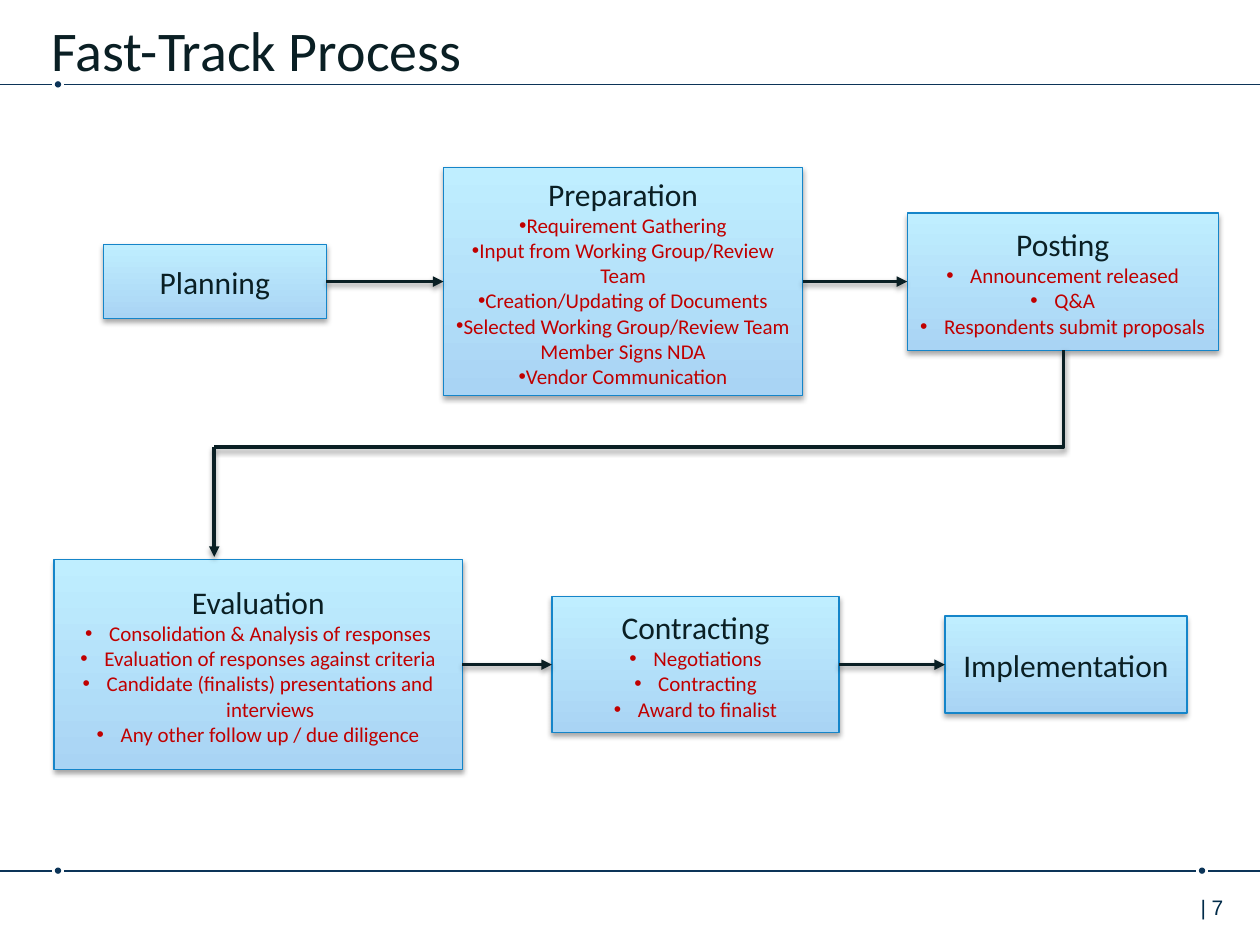
import pptx
import pptx.util
import pptx.dml.color
import pptx.enum.dml
import pptx.enum.shapes
import pptx.enum.text
import pptx.oxml
import pptx.oxml.ns
from dataclasses import dataclass
from lxml import etree

Inches, Pt = pptx.util.Inches, pptx.util.Pt
RGB = pptx.dml.color.RGBColor.from_string
SHAPE = pptx.enum.shapes.MSO_SHAPE
CONNECTOR = pptx.enum.shapes.MSO_CONNECTOR
ALIGN = pptx.enum.text.PP_ALIGN
ANCHOR = pptx.enum.text.MSO_ANCHOR
qn = pptx.oxml.ns.qn


@dataclass(frozen=True)
class Theme:
    ink: str = "0A1F24"
    rule: str = "0C3458"
    number: str = "002B49"
    detail: str = "C00000"
    border: str = "1585C9"
    top: str = "BFEEFF"
    bottom: str = "A9D4F4"
    font: str = "Calibri"
    number_font: str = "Arial"
    title_size: int = 32
    stage_size: int = 18
    small_size: int = 12


THEME = Theme()

# Each stage: left offset in its row, width, height, name, details, bullet indent
TOP_ROW = [
    (0, 1.77, 0.59, "Planning", [], 0),
    (2.7, 2.85, 1.81, "Preparation", [
        "Requirement Gathering",
        "Input from Working Group/Review Team",
        "Creation/Updating of Documents",
        "Selected Working Group/Review Team Member Signs NDA",
        "Vendor Communication"], 0),
    (6.38, 2.47, 1.09, "Posting", [
        "Announcement released", "Q&A", "Respondents submit proposals"], 0.19),
]
BOTTOM_ROW = [
    (0, 3.24, 1.67, "Evaluation", [
        "Consolidation & Analysis of responses",
        "Evaluation of responses against criteria",
        "Candidate (finalists) presentations and interviews",
        "Any other follow up / due diligence"], 0.19),
    (3.95, 2.28, 1.08, "Contracting", [
        "Negotiations", "Contracting", "Award to finalist"], 0.19),
    (7.07, 1.92, 0.77, "Implementation", [], 0),
]


def add_effects(sp_pr, alpha=None, distance=0):
    """Set the effect list: a soft shadow straight below, or nothing."""
    effects = sp_pr.find(qn("a:effectLst"))
    if effects is None:
        effects = etree.SubElement(sp_pr, qn("a:effectLst"))
    if alpha:
        shadow = etree.SubElement(
            effects, qn("a:outerShdw"), blurRad=str(Pt(3.1)),
            dist=str(Pt(distance)), dir="5400000", rotWithShape="0")
        color = etree.SubElement(shadow, qn("a:srgbClr"), val="000000")
        etree.SubElement(color, qn("a:alpha"), val=str(alpha * 1000))


def write(p, text, size, color, font=THEME.font):
    r = p.add_run()
    r.text = text
    for name, value in {"size": Pt(size), "name": font}.items():
        setattr(r.font, name, value)
    r.font.color.rgb = RGB(color)


def add_bullet(p, indent):
    p_pr = p._p.get_or_add_pPr()
    p_pr.set("marL", str(Inches(indent)))
    p_pr.set("indent", str(-Inches(indent)))
    etree.SubElement(p_pr, qn("a:buFont"), typeface=THEME.number_font)
    etree.SubElement(p_pr, qn("a:buChar"), char="•")


def add_text(s, box, text, size, color, font, insets):
    tf = s.shapes.add_textbox(*map(Inches, box)).text_frame
    tf.word_wrap = True
    for side, value in insets.items():
        setattr(tf, "margin_" + side, Inches(value))
    write(tf.paragraphs[0], text, size, color, font)


def style_line(line, color, width):
    line.color.rgb = RGB(color)
    line.width = Pt(width)


def add_rule(s, y, dots):
    """Draw a full-width rule that breaks around each dot."""
    gap, size = 0.05, 0.05
    starts = [0] + [x + gap for x in dots]
    ends = [x - gap for x in dots] + [10]
    for start, end in zip(starts, ends):
        c = s.shapes.add_connector(CONNECTOR.STRAIGHT, Inches(start), Inches(y),
                                   Inches(end), Inches(y))
        style_line(c.line, THEME.rule, 1)
        add_effects(c._element.spPr)
    for x in dots:
        sp = s.shapes.add_shape(SHAPE.OVAL, Inches(x - size / 2), Inches(y - size / 2),
                                Inches(size), Inches(size))
        sp.shadow.inherit = False
        sp.fill.solid()
        sp.fill.fore_color.rgb = RGB(THEME.rule)
        sp.line.fill.background()


def add_flow_line(s, start, end, kind=CONNECTOR.STRAIGHT, arrow=True):
    c = s.shapes.add_connector(kind, *map(Inches, (*start, *end)))
    style_line(c.line, THEME.ink, 2)
    if arrow:
        etree.SubElement(c.line._get_or_add_ln(), qn("a:tailEnd"), type="triangle")
    add_effects(c._element.spPr, 38, 1.6)
    return c


def add_stage(s, box, name, details, indent):
    sp = s.shapes.add_shape(SHAPE.RECTANGLE, *map(Inches, box))
    sp.fill.gradient()
    sp.fill.gradient_angle = 270
    for stop, color in zip(sp.fill.gradient_stops, (THEME.top, THEME.bottom)):
        stop.color.rgb = RGB(color)
    style_line(sp.line, THEME.border, 0.75)
    sp.shadow.inherit = False
    add_effects(sp._element.spPr, 35, 1.8)
    tf = sp.text_frame
    tf.vertical_anchor = ANCHOR.MIDDLE
    p = tf.paragraphs[0]
    p.alignment = ALIGN.CENTER
    write(p, name, THEME.stage_size, THEME.ink)
    for detail in details:
        p = tf.add_paragraph()
        p.alignment = ALIGN.CENTER
        add_bullet(p, indent)
        write(p, detail, THEME.small_size, THEME.detail)
    return sp


def add_row(s, box, stages):
    """Centre the stages on the middle of the box and join them with arrows."""
    left, top, _, height = box
    middle = top + height / 2
    previous = None
    for x, w, h, name, details, indent in stages:
        sp = add_stage(s, (left + x, middle - h / 2, w, h), name, details, indent)
        if previous is not None:
            c = add_flow_line(s, (0, middle), (left + x, middle))
            c.begin_connect(previous, 3)
            c.end_connect(sp, 1)
        previous = sp


def add_return_path(s, box):
    """Lead from the top right of the box down, left, and down to its bottom left."""
    left, top, width, height = box
    drop = 0.77
    x, y = left + (width - drop) / 2, top + (drop - width) / 2
    bend = add_flow_line(s, (x, y), (x + drop, y + width), CONNECTOR.ELBOW, arrow=False)
    sp_pr = bend._element.spPr
    sp_pr.find(qn("a:prstGeom")).set("prst", "bentConnector2")
    sp_pr.find(qn("a:xfrm")).set("rot", "5400000")
    add_flow_line(s, (left, top + drop), (left, top + height))


def main():
    prs = pptx.Presentation()
    prs.slide_width, prs.slide_height = Inches(10), Inches(7.5)
    s = prs.slides.add_slide(prs.slide_layouts[6])
    add_rule(s, 0.67, [0.46])
    add_rule(s, 6.91, [0.46, 9.54])
    add_text(s, (9.43, 7.05, 0.57, 0.4), "| 7", THEME.small_size, THEME.number,
             THEME.number_font, {"right": 0})
    add_text(s, (0.41, 0.05, 8.76, 0.49), "Fast-Track Process", THEME.title_size,
             THEME.ink, THEME.font, {"left": 0, "right": 0, "top": 0.07})
    add_row(s, (0.82, 1.33, 8.85, 1.81), TOP_ROW)
    add_row(s, (0.43, 4.44, 8.99, 1.67), BOTTOM_ROW)
    add_return_path(s, (1.7, 2.78, 6.74, 1.64))
    prs.save("out.pptx")


if __name__ == "__main__":
    main()
